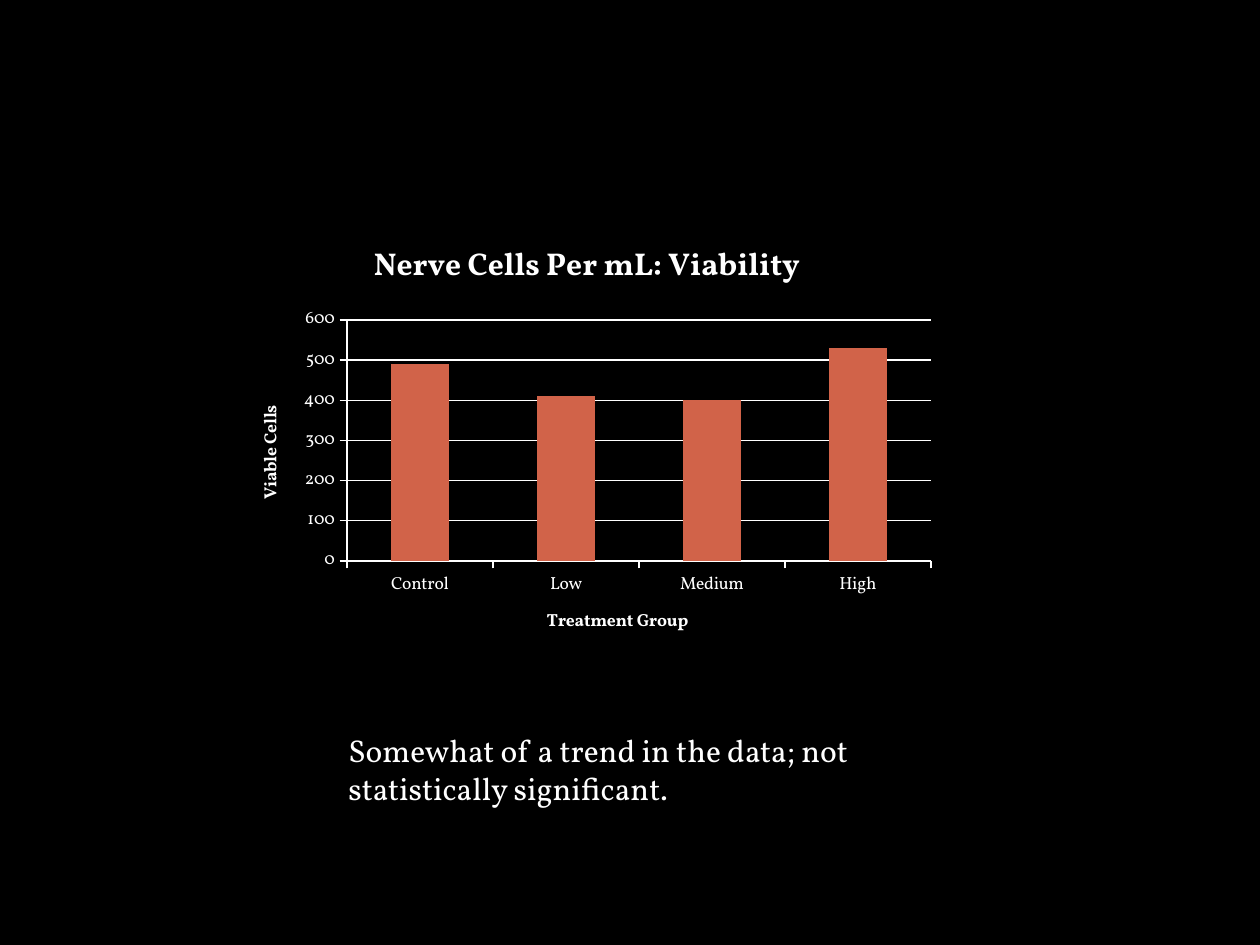
"""Builds a slide with a column chart of nerve cell viability and its finding."""
from dataclasses import dataclass

from lxml.etree import SubElement
from pptx import Presentation
from pptx.chart.data import CategoryChartData
from pptx.dml.color import RGBColor
from pptx.enum.chart import XL_CHART_TYPE, XL_TICK_MARK
from pptx.oxml.ns import qn
from pptx.util import Emu, Pt

PX = 914400 // 126


@dataclass(frozen=True)
class Theme:
    font: str = "Vollkorn"
    background: RGBColor = RGBColor(0, 0, 0)
    ink: RGBColor = RGBColor(255, 255, 255)
    column: RGBColor = RGBColor(0xD1, 0x63, 0x49)
    body_size: int = 18
    label_size: int = 10


class SlideBuilder:
    def __init__(self, deck, theme):
        self.theme = theme
        self.page = deck.slides.add_slide(deck.slide_layouts[6])
        fill = self.page.background.fill
        fill.solid()
        fill.fore_color.rgb = theme.background

    def style_font(self, font, size, bold=False):
        font.name = self.theme.font
        font.size = Pt(size)
        font.bold = bold
        font.color.rgb = self.theme.ink

    def text(self, box, content):
        frame = self.page.shapes.add_textbox(*(Emu(n * PX) for n in box)).text_frame
        frame.word_wrap = True
        para = frame.paragraphs[0]
        para.text = content
        self.style_font(para.font, self.theme.body_size)

    def heading(self, owner, content, size):
        para = owner.text_frame.paragraphs[0]
        para.text = content
        self.style_font(para.font, size, bold=True)

    def axis(self, axis, title):
        axis.major_tick_mark = XL_TICK_MARK.OUTSIDE
        axis.minor_tick_mark = XL_TICK_MARK.NONE
        axis.format.line.color.rgb = self.theme.ink
        self.style_font(axis.tick_labels.font, self.theme.label_size)
        self.heading(axis.axis_title, title, self.theme.label_size)

    def place_plot(self, chart, box, plot):
        area = chart.element.find(f".//{qn('c:plotArea')}")
        for old in area.findall(qn("c:layout")):
            area.remove(old)
        layout = SubElement(area, qn("c:layout"))
        area.insert(0, layout)
        manual = SubElement(layout, qn("c:manualLayout"))
        left, top, width, height = box
        settings = {
            "layoutTarget": "inner", "xMode": "edge", "yMode": "edge",
            "x": round((plot[0] - left) / width, 4),
            "y": round((plot[1] - top) / height, 4),
            "w": round(plot[2] / width, 4),
            "h": round(plot[3] / height, 4),
        }
        for name, value in settings.items():
            SubElement(manual, qn(f"c:{name}")).set("val", str(value))

    def column_chart(self, box, plot, title, axis_titles, series, values):
        data = CategoryChartData()
        data.categories = list(values)
        data.add_series(series, values.values())
        chart = self.page.shapes.add_chart(
            XL_CHART_TYPE.COLUMN_CLUSTERED, *(Emu(n * PX) for n in box), data).chart
        self.style_font(chart.font, self.theme.label_size)
        chart.has_legend = False
        self.heading(chart.chart_title, title, self.theme.body_size)
        chart.chart_title.include_in_layout = False
        for axis, name in zip((chart.category_axis, chart.value_axis), axis_titles):
            self.axis(axis, name)
        scale = chart.value_axis
        scale.minimum_scale, scale.maximum_scale, scale.major_unit = 0, 600, 100
        scale.major_gridlines.format.line.color.rgb = self.theme.ink
        columns = chart.plots[0]
        columns.gap_width = 150
        columns.vary_by_categories = False
        fill = columns.series[0].format.fill
        fill.solid()
        fill.fore_color.rgb = self.theme.column
        self.place_plot(chart, box, plot)


def main():
    deck = Presentation()
    deck.slide_width, deck.slide_height = Emu(1260 * PX), Emu(945 * PX)
    slide = SlideBuilder(deck, Theme())
    slide.column_chart(
        box=(230, 220, 714, 441),
        plot=(347, 320, 584, 241),
        title="Nerve Cells Per mL: Viability",
        axis_titles=("Treatment Group", "Viable Cells"),
        series="Series 1",
        values={"Control": 490, "Low": 410, "Medium": 400, "High": 530},
    )
    slide.text((336, 725, 640, 89),
               "Somewhat of a trend in the data; not statistically significant.")
    deck.save("out.pptx")


if __name__ == "__main__":
    main()
